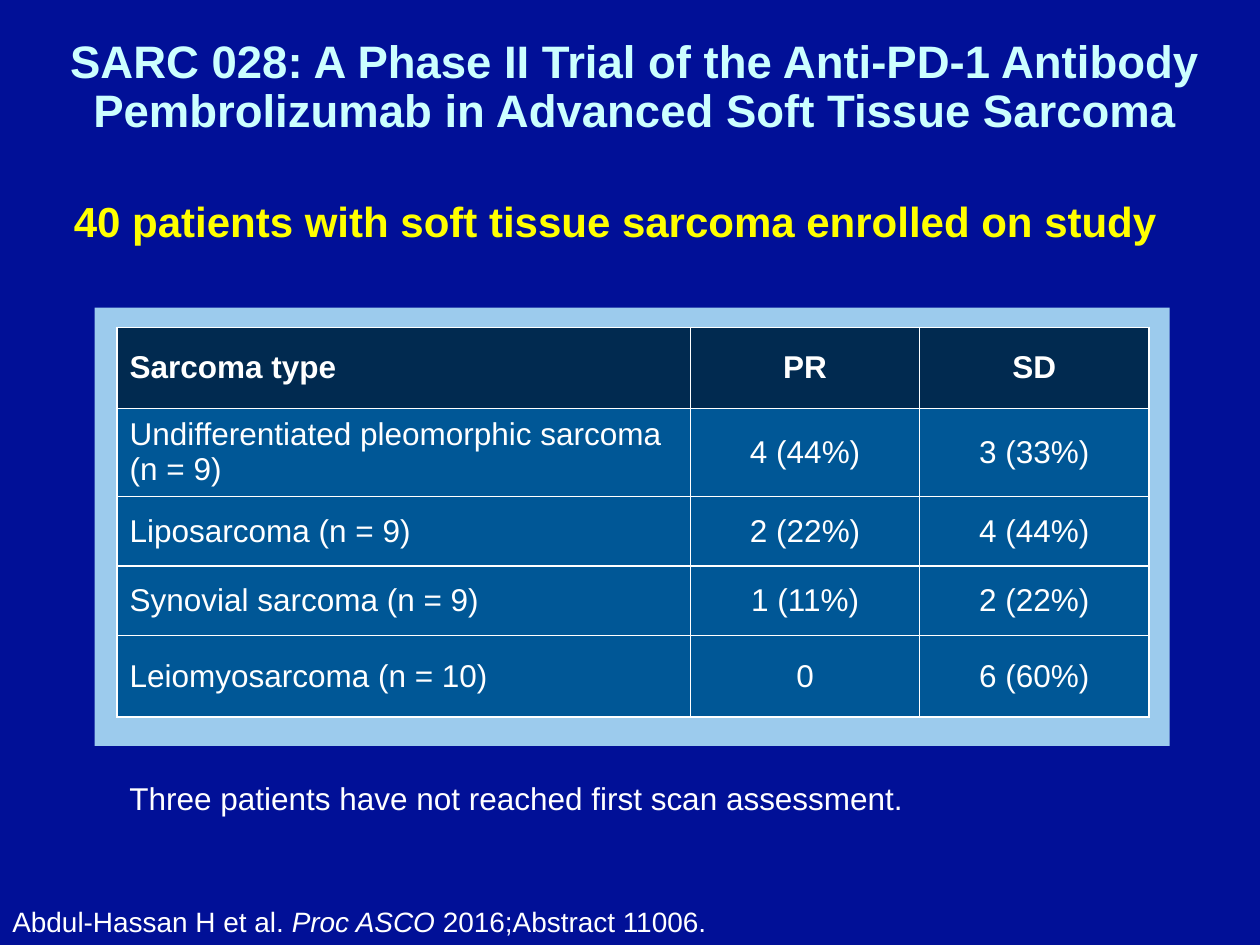
from lxml.etree import SubElement
from pptx import Presentation
from pptx.dml.color import RGBColor
from pptx.enum.shapes import MSO_SHAPE
from pptx.enum.text import MSO_ANCHOR, MSO_AUTO_SIZE, PP_ALIGN
from pptx.oxml.ns import qn
from pptx.util import Cm, Pt

COLORS = {
    "background": "011097",
    "panel": "9CCBED",
    "title": "CCFFFF",
    "highlight": "FFFF00",
    "text": "FFFFFF",
    "header": "012A50",
    "body": "005796",
}


def style_runs(p, size, color="text", bold=False):
    for r in p.runs:
        r.font.name = "Arial"
        r.font.size = Pt(size)
        r.font.bold = bold
        r.font.color.rgb = RGBColor.from_string(COLORS[color])


def add_text(box, parts, size, color="text", bold=False, wrap=True):
    sp = s.shapes.add_textbox(*[Cm(v) for v in box])
    tf = sp.text_frame
    tf.word_wrap = wrap
    tf.auto_size = MSO_AUTO_SIZE.SHAPE_TO_FIT_TEXT
    p = tf.paragraphs[0]
    for part in parts:
        p.add_run().text = part
    style_runs(p, size, color, bold)
    return tf


prs = Presentation()
prs.slide_width, prs.slide_height = Cm(25.4), Cm(19.05)
s = prs.slides.add_slide(prs.slide_layouts[6])
s.background.fill.solid()
s.background.fill.fore_color.rgb = RGBColor.from_string(COLORS["background"])

panel = s.shapes.add_shape(MSO_SHAPE.RECTANGLE, Cm(1.91), Cm(6.2), Cm(21.67), Cm(8.84))
panel.shadow.inherit = False
panel.fill.solid()
panel.fill.fore_color.rgb = RGBColor.from_string(COLORS["panel"])
panel.line.fill.background()

title = "SARC 028: A Phase II Trial of the Anti-PD-1 Antibody Pembrolizumab in Advanced Soft Tissue Sarcoma"
tf = add_text((0.64, 0, 24.33, 3.56), [title], 26, "title", True)
tf.auto_size = MSO_AUTO_SIZE.NONE
tf.vertical_anchor = MSO_ANCHOR.MIDDLE
tf.paragraphs[0].alignment = PP_ALIGN.CENTER
tf.paragraphs[0].line_spacing = 0.9

add_text((1.24, 3.81, 22.78, 1.27), ["40 patients with soft tissue sarcoma enrolled on study"],
         24, "highlight", True, wrap=False)

rows = [
    ("Sarcoma type", "PR", "SD"),
    ("Undifferentiated pleomorphic sarcoma (n = 9)", "4 (44%)", "3 (33%)"),
    ("Liposarcoma (n = 9)", "2 (22%)", "4 (44%)"),
    ("Synovial sarcoma (n = 9)", "1 (11%)", "2 (22%)"),
    ("Leiomyosarcoma (n = 10)", "0", "6 (60%)"),
]
widths = [11.56, 4.62, 4.62]
heights = [1.63, 1.55, 1.4, 1.4, 1.65]
table = s.shapes.add_table(len(rows), len(widths), Cm(2.36), Cm(6.6),
                           Cm(sum(widths)), Cm(sum(heights))).table
for col, width in zip(table.columns, widths):
    col.width = Cm(width)
for i, (row, height) in enumerate(zip(rows, heights)):
    table.rows[i].height = Cm(height)
    for j, value in enumerate(row):
        cell = table.cell(i, j)
        cell.text_frame.text = value
        cell.vertical_anchor = MSO_ANCHOR.MIDDLE
        p = cell.text_frame.paragraphs[0]
        p.alignment = PP_ALIGN.CENTER if j else PP_ALIGN.LEFT
        style_runs(p, 18, bold=i == 0)
        tcPr = cell._tc.get_or_add_tcPr()
        for side in ("a:lnL", "a:lnR", "a:lnT", "a:lnB"):
            ln = SubElement(tcPr, qn(side), w=str(Pt(1)))
            fill = SubElement(ln, qn("a:solidFill"))
            SubElement(fill, qn("a:srgbClr"), val=COLORS["text"])
        cell.fill.solid()
        cell.fill.fore_color.rgb = RGBColor.from_string(COLORS["body" if i else "header"])
        tcPr.append(tcPr.find(qn("a:solidFill")))

tf = add_text((0, 18.11, 24.84, 0.94),
              ["Abdul-Hassan H et al. ", "Proc ASCO ", "2016;Abstract 11006."], 16)
tf.paragraphs[0].runs[1].font.italic = True

add_text((2.36, 15.57, 16.26, 1.02), ["Three patients have not reached first scan assessment."],
         18, wrap=False)

prs.save("out.pptx")
